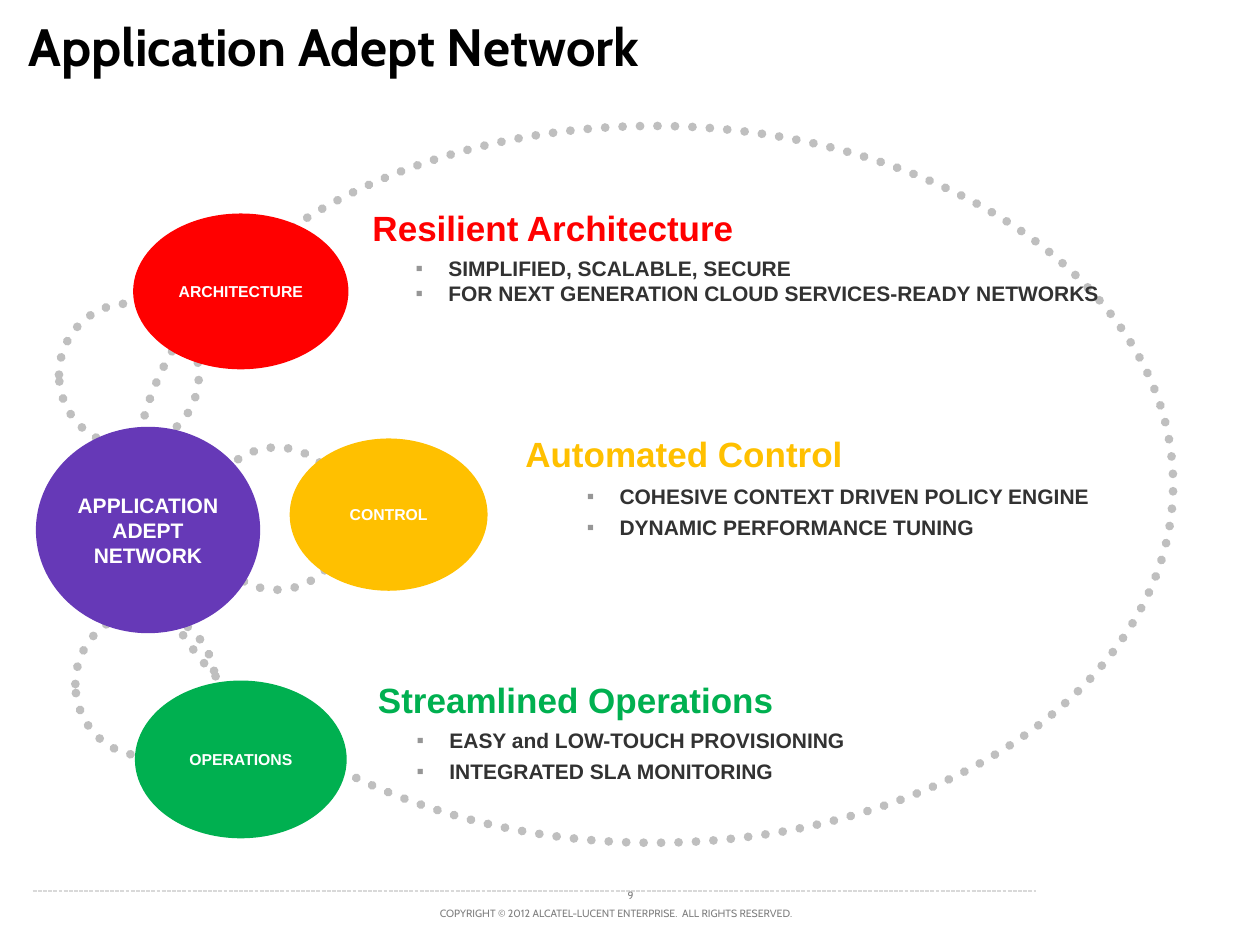
from lxml import etree
from pptx import Presentation
from pptx.dml.color import RGBColor
from pptx.enum.dml import MSO_LINE
from pptx.enum.shapes import MSO_CONNECTOR, MSO_SHAPE
from pptx.enum.text import MSO_ANCHOR, PP_ALIGN
from pptx.oxml.ns import qn
from pptx.util import Cm, Pt

OVAL = MSO_SHAPE.OVAL
LINE = MSO_CONNECTOR.STRAIGHT
DOT, DASH = MSO_LINE.ROUND_DOT, MSO_LINE.SQUARE_DOT
MIDDLE, BOTTOM = MSO_ANCHOR.MIDDLE, MSO_ANCHOR.BOTTOM
LEFT, CENTER = PP_ALIGN.LEFT, PP_ALIGN.CENTER

RED, GOLD, GREEN, PURPLE = "FF0000", "FFC000", "00B050", "6639B7"
WHITE, GRAY = "FFFFFF", "BFBFBF"


def rgb(code):
    return RGBColor.from_string(code)


def write(shape, lines, size, code, face="Arial", bold=True, align=LEFT,
          mark=False, gap=0):
    frame = shape.text_frame
    frame.word_wrap = True
    for i, line in enumerate(lines):
        para = frame.paragraphs[0] if i == 0 else frame.add_paragraph()
        para.text = line
        para.alignment = align
        para.space_after = Pt(gap)
        if mark:
            props = para._p.get_or_add_pPr()
            props.set("marL", str(Cm(1.14)))
            props.set("indent", str(Cm(-0.66)))
            tint = etree.SubElement(props, qn("a:buClr"))
            etree.SubElement(tint, qn("a:srgbClr"), val="969696")
            etree.SubElement(props, qn("a:buFont"), typeface="Arial")
            etree.SubElement(props, qn("a:buChar"), char="▪")
        font = para.font
        font.name, font.size, font.bold = face, Pt(size), bold
        font.color.rgb = rgb(code)
    return frame


deck = Presentation()
deck.slide_width, deck.slide_height = Cm(25.4), Cm(19.05)
slide = deck.slides.add_slide(deck.slide_layouts[6])
shapes = slide.shapes

# Footer rule, copyright and page number
rule = shapes.add_connector(LINE, Cm(0.66), Cm(17.96), Cm(20.88), Cm(17.96))
rule.line.color.rgb = rgb("D9D9D9")
rule.line.width = Pt(0.75)
rule.line.dash_style = DASH
etree.SubElement(rule._element.spPr, qn("a:effectLst"))

foot = shapes.add_textbox(Cm(3.51), Cm(18.29), Cm(17.81), Cm(0.64))
frame = write(foot, ["COPYRIGHT © 2012 ALCATEL-LUCENT ENTERPRISE.  ALL RIGHTS RESERVED."],
              6, "7F7F7F", "Cabin", False, CENTER)
frame.vertical_anchor = BOTTOM
frame.margin_bottom = Cm(0.4)

page = shapes.add_textbox(Cm(12.04), Cm(17.65), Cm(1.35), Cm(0.66))
frame = write(page, ["9"], 6, "808080", "Cabin", False, CENTER)
frame.vertical_anchor = BOTTOM

# Title
title = shapes.add_textbox(Cm(0.33), Cm(0.15), Cm(21.54), Cm(2.54))
write(title, ["Application Adept Network"], 30, "000000", "Cabin")

# Dotted rings and filled ovals, back to front:
# place, fill, outline width, text size, lines
ovals = [
    ((2.72, 2.54, 20.93, 14.45), None, 5, 0, []),
    ((1.19, 6.12, 2.82, 2.87), None, 5, 0, []),
    ((2.72, 4.34, 4.27, 3.07), RED, 2, 9, ["ARCHITECTURE"]),
    ((1.52, 12.34, 2.82, 2.9), None, 5, 0, []),
    ((2.72, 13.72, 4.27, 3.18), GREEN, 0, 9, ["OPERATIONS"]),
    ((4.17, 9.02, 2.82, 2.87), None, 5, 0, []),
    ((5.84, 8.84, 3.99, 3.07), GOLD, 0, 9, ["CONTROL"]),
    ((0.76, 8.64, 4.45, 4.09), PURPLE, 2, 12, ["APPLICATION", "ADEPT", "NETWORK"]),
]
for place, code, width, size, lines in ovals:
    oval = shapes.add_shape(OVAL, *map(Cm, place))
    oval.shadow.inherit = False
    if width:
        oval.line.color.rgb = rgb(code or GRAY)
        oval.line.width = Pt(width)
    else:
        oval.line.fill.background()
    if code:
        oval.fill.solid()
        oval.fill.fore_color.rgb = rgb(code)
        frame = write(oval, lines, size, WHITE, align=CENTER)
        frame.vertical_anchor = MIDDLE
    else:
        oval.fill.background()
        oval.line.dash_style = DOT
        oval.line._ln.set("cap", "rnd")

# The hub label is the last one written
frame.word_wrap = False
frame.margin_left = frame.margin_right = frame.margin_top = frame.margin_bottom = 0

# Headings with their bullet lists
topics = [
    ("Resilient Architecture", RED, (7.26, 4.04, 14.91, 1.12),
     (7.65, 5.03, 14.99, 1.27), 0,
     ["SIMPLIFIED, SCALABLE, SECURE",
      "FOR NEXT GENERATION CLOUD SERVICES-READY NETWORKS"]),
    ("Automated Control", GOLD, (10.34, 8.59, 10.13, 1.12),
     (11.1, 9.63, 11.71, 1.4), 3,
     ["COHESIVE CONTEXT DRIVEN POLICY ENGINE",
      "DYNAMIC PERFORMANCE TUNING"]),
    ("Streamlined Operations", GREEN, (7.37, 13.56, 14.5, 1.96),
     (7.67, 14.55, 10.52, 1.4), 3,
     ["EASY and LOW-TOUCH PROVISIONING",
      "INTEGRATED SLA MONITORING"]),
]
for head, code, top, body, gap, points in topics:
    write(shapes.add_textbox(*map(Cm, top)), [head], 20, code)
    write(shapes.add_textbox(*map(Cm, body)), points, 12, "323232",
          mark=True, gap=gap)

deck.save("out.pptx")
